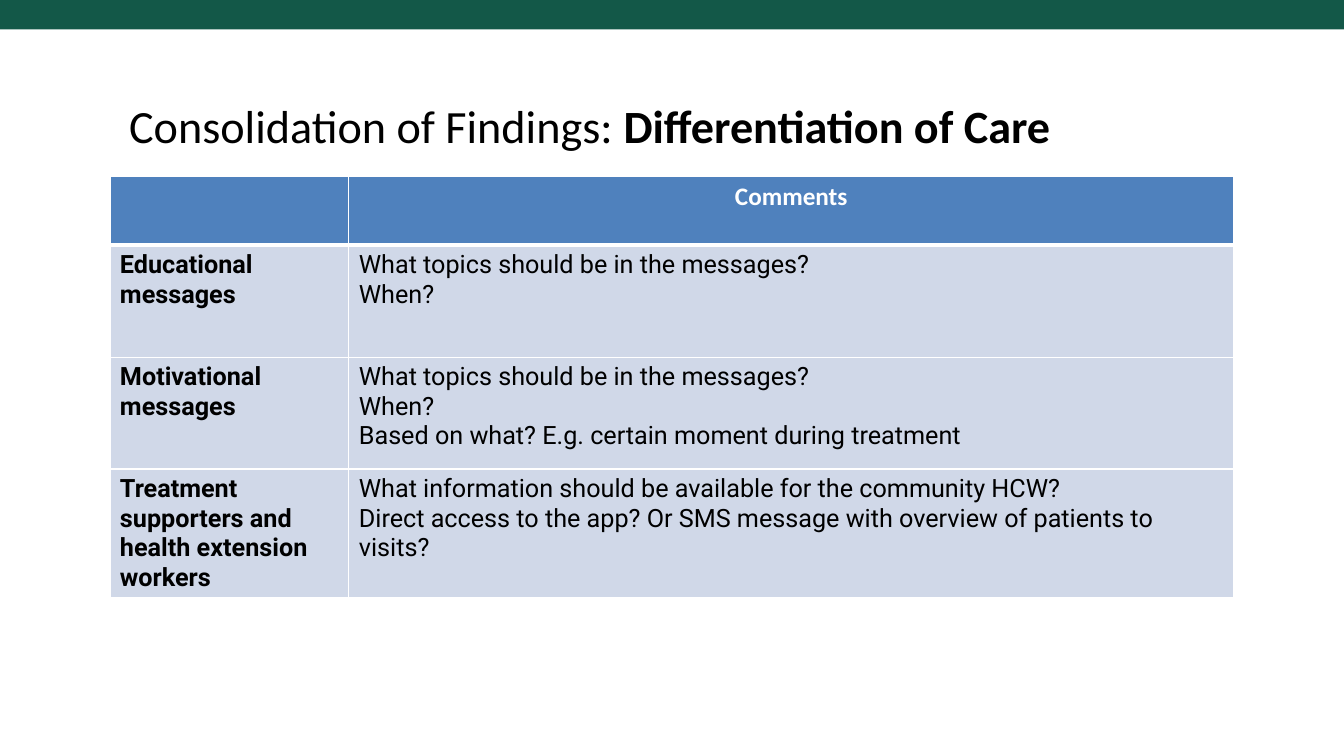
from pptx import Presentation
from pptx.dml.color import RGBColor
from pptx.enum.shapes import MSO_SHAPE
from pptx.enum.text import MSO_ANCHOR, PP_ALIGN
from pptx.oxml import parse_xml
from pptx.oxml.ns import nsdecls
from pptx.util import Cm, Pt

GREEN = RGBColor(0x13, 0x58, 0x48)
BLUE = RGBColor(0x4F, 0x81, 0xBD)
PALE_BLUE = RGBColor(0xD0, 0xD8, 0xE8)
WHITE = RGBColor(0xFF, 0xFF, 0xFF)
BLACK = RGBColor(0, 0, 0)

COLUMN_WIDTHS = [6.02, 22.3]
ROW_HEIGHTS = [1.73, 2.82, 2.82, 3.25]
FINDINGS = [
    ("Educational messages",
     ["What topics should be in the messages?", "When?"]),
    ("Motivational messages",
     ["What topics should be in the messages?", "When?",
      "Based on what? E.g. certain moment during treatment"]),
    ("Treatment supporters and health extension workers",
     ["What information should be available for the community HCW?",
      "Direct access to the app? Or SMS message with overview of patients to visits?"]),
]


def style_font(font, name, size, color, bold=False):
    font.name = name
    font.size = Pt(size)
    font.color.rgb = color
    font.bold = bold


def add_top_band(slide, width):
    band = slide.shapes.add_shape(MSO_SHAPE.RECTANGLE, 0, 0, width, Cm(0.74))
    band.shadow.inherit = False
    band.fill.solid()
    band.fill.fore_color.rgb = GREEN
    band.line.fill.background()


def format_title(title, topic, emphasis):
    title.left, title.top = Cm(3), Cm(2.41)
    title.width, title.height = Cm(26.67), Cm(1.68)
    title.text_frame.vertical_anchor = MSO_ANCHOR.MIDDLE
    heading = title.text_frame.paragraphs[0]
    heading.alignment = PP_ALIGN.LEFT
    heading.line_spacing = 0.89
    style_font(heading.font, "Calibri", 33, BLACK)
    heading.add_run().text = topic
    emphasised = heading.add_run()
    emphasised.text = emphasis
    emphasised.font.bold = True


def add_borders(cell, top, bottom):
    """White borders, with widths in points."""
    for side, width in (("L", 1), ("R", 1), ("T", top), ("B", bottom)):
        cell._tc.get_or_add_tcPr().append(parse_xml(
            f'<a:ln{side} {nsdecls("a")} w="{Pt(width)}"><a:solidFill>'
            f'<a:srgbClr val="{WHITE}"/></a:solidFill></a:ln{side}>'))


def fill_cell(cell, lines, fill, font, color, bold, alignment, borders):
    add_borders(cell, *borders)
    cell.fill.solid()
    cell.fill.fore_color.rgb = fill
    cell.text = "\n".join(lines)
    for paragraph in cell.text_frame.paragraphs:
        paragraph.alignment = alignment
        style_font(paragraph.font, font, 18, color, bold)


def add_findings_table(slide):
    findings = slide.shapes.add_table(
        len(ROW_HEIGHTS), len(COLUMN_WIDTHS), Cm(2.77), Cm(4.45),
        Cm(sum(COLUMN_WIDTHS)), Cm(sum(ROW_HEIGHTS))).table
    for column, width in zip(findings.columns, COLUMN_WIDTHS):
        column.width = Cm(width)
    for row, height in zip(findings.rows, ROW_HEIGHTS):
        row.height = Cm(height)

    # Header row
    for column, heading in enumerate(["", "Comments"]):
        fill_cell(findings.cell(0, column), [heading], BLUE, "Calibri",
                  WHITE, True, PP_ALIGN.CENTER, (1, 3))

    # One row for each finding
    for row, (subject, comments) in enumerate(FINDINGS, start=1):
        borders = (3 if row == 1 else 1, 1)
        for column, lines in enumerate([[subject], comments]):
            fill_cell(findings.cell(row, column), lines, PALE_BLUE, "Roboto",
                      BLACK, column == 0, PP_ALIGN.LEFT, borders)


def main():
    presentation = Presentation()
    presentation.slide_width = Cm(33.87)
    presentation.slide_height = Cm(19.05)
    slide = presentation.slides.add_slide(presentation.slide_layouts[5])
    add_top_band(slide, presentation.slide_width)
    format_title(slide.shapes.title, "Consolidation of Findings: ",
                 "Differentiation of Care")
    add_findings_table(slide)
    presentation.save("out.pptx")


if __name__ == "__main__":
    main()
